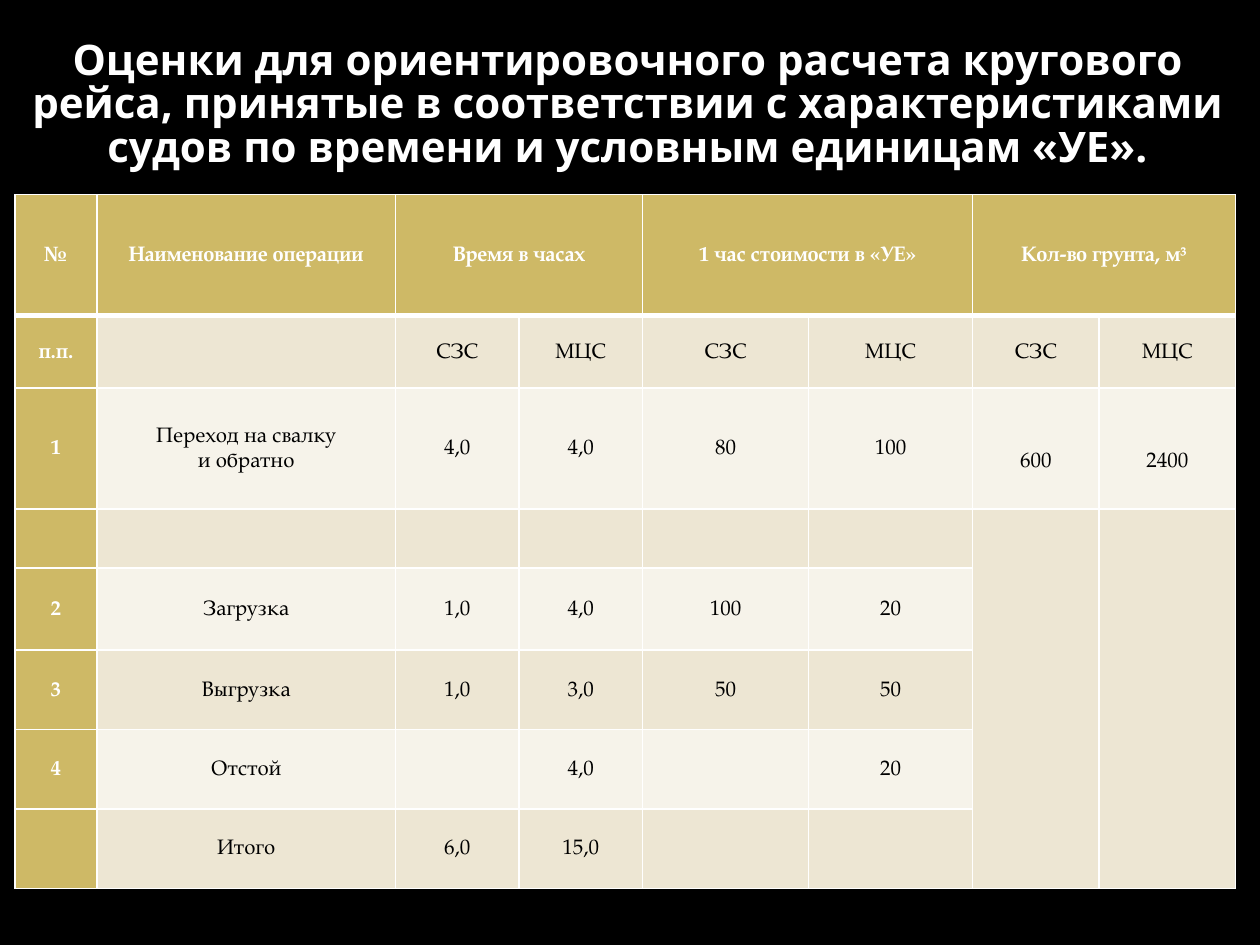
from lxml import etree
from pptx import Presentation
from pptx.dml.color import RGBColor
from pptx.enum.text import MSO_ANCHOR, MSO_AUTO_SIZE, PP_ALIGN
from pptx.oxml.ns import qn
from pptx.util import Pt

CENTER = PP_ALIGN.CENTER
MIDDLE = MSO_ANCHOR.MIDDLE
NO_AUTOFIT = MSO_AUTO_SIZE.NONE
TITLE_ONLY = 5

TITLE = ("Оценки для ориентировочного расчета кругового рейса, принятые "
         "в соответствии с характеристиками судов по времени "
         "и условным единицам «УЕ».")
ROWS = [
    ["№", "Наименование операции", "Время в часах", "",
     "1 час стоимости в «УЕ»", "", "Кол-во грунта, м³", ""],
    ["п.п.", ""] + ["СЗС", "МЦС"] * 3,
    ["1", "Переход на свалку\nи обратно", "4,0", "4,0", "80", "100", "600", "2400"],
    [""] * 8,
    ["2", "Загрузка", "1,0", "4,0", "100", "20", "", ""],
    ["3", "Выгрузка", "1,0", "3,0", "50", "50", "", ""],
    ["4", "Отстой", "", "4,0", "", "20", "", ""],
    ["", "Итого", "6,0", "15,0", "", "", "", ""],
]
# First and last cell of each merged block, as (row, column)
MERGES = [((0, 2), (0, 3)), ((0, 4), (0, 5)), ((0, 6), (0, 7)),
          ((3, 6), (7, 6)), ((3, 7), (7, 7))]
LOWERED = [(2, 6), (2, 7)]

COLUMN_WIDTHS = [46.8, 170.6, 70.6, 70.6, 95, 93.6, 72.4, 78]
ROW_HEIGHTS = [69.1, 41.4, 69.1, 33.8, 46.8, 45.4, 45.4, 45.4]
TABLE_LEFT, TABLE_TOP = 8.6, 111.3
LOWERED_MARGIN = 14

THEME = {
    "background": "000000", "light": "FFFFFF", "dark": "000000",
    "accent": "CEB966", "band": "EDE6D3", "pale": "F6F3EA",
    "title_font": "Noto Sans", "table_font": "TeX Gyre Pagella",
    "title_size": 24, "table_size": 12,
    "thin_line": 1, "thick_line": 3,
}


def write_text(frame, text, *, font, size, color, bold=False, line_spacing=1.0):
    frame.text = text
    for para in frame.paragraphs:
        para.alignment = CENTER
        para.line_spacing = line_spacing
        para.font.name = font
        para.font.size = Pt(size)
        para.font.bold = bold
        para.font.color.rgb = RGBColor.from_string(color)


def set_borders(cell, **widths):
    properties = cell._tc.get_or_add_tcPr()
    for side in ("L", "R", "T", "B"):
        line = etree.SubElement(properties, qn(f"a:ln{side}"),
                                w=str(Pt(widths.get(side, THEME["thin_line"]))))
        fill = etree.SubElement(line, qn("a:solidFill"))
        etree.SubElement(fill, qn("a:srgbClr"), val=THEME["light"])


def add_title(slide):
    title = slide.shapes.title
    title.left, title.top, title.width, title.height = Pt(0), Pt(9.4), Pt(717), Pt(102)
    frame = title.text_frame
    frame.word_wrap = True
    frame.auto_size = NO_AUTOFIT
    frame.vertical_anchor = MIDDLE
    write_text(frame, TITLE, font=THEME["title_font"], size=THEME["title_size"],
               color=THEME["light"], bold=True, line_spacing=0.87)


def format_cell(cell, row, column, text):
    heading = row == 0 or column == 0
    cell.margin_left = cell.margin_right = cell.margin_bottom = Pt(0)
    cell.margin_top = Pt(LOWERED_MARGIN if (row, column) in LOWERED else 0)
    cell.vertical_anchor = MIDDLE
    thick_side = {0: "B", 1: "T"}.get(row)
    set_borders(cell, **({thick_side: THEME["thick_line"]} if thick_side else {}))
    if heading:
        fill = THEME["accent"]
    elif row % 2 or column >= 6 and row > 2:
        fill = THEME["band"]
    else:
        fill = THEME["pale"]
    cell.fill.solid()
    cell.fill.fore_color.rgb = RGBColor.from_string(fill)
    write_text(cell.text_frame, text, font=THEME["table_font"],
               size=THEME["table_size"], bold=heading, line_spacing=1.15,
               color=THEME["light"] if heading else THEME["dark"])


def add_estimates_table(slide):
    table = slide.shapes.add_table(
        len(ROWS), len(COLUMN_WIDTHS), Pt(TABLE_LEFT), Pt(TABLE_TOP),
        Pt(sum(COLUMN_WIDTHS)), Pt(sum(ROW_HEIGHTS))).table
    for column, width in zip(table.columns, COLUMN_WIDTHS):
        column.width = Pt(width)
    for row, height in zip(table.rows, ROW_HEIGHTS):
        row.height = Pt(height)
    for row, texts in enumerate(ROWS):
        for column, text in enumerate(texts):
            format_cell(table.cell(row, column), row, column, text)
    for first, last in MERGES:
        table.cell(*first).merge(table.cell(*last))


def main():
    deck = Presentation()
    deck.slide_width, deck.slide_height = Pt(720), Pt(540)
    slide = deck.slides.add_slide(deck.slide_layouts[TITLE_ONLY])
    slide.background.fill.solid()
    slide.background.fill.fore_color.rgb = RGBColor.from_string(THEME["background"])
    add_title(slide)
    add_estimates_table(slide)
    deck.save("out.pptx")


if __name__ == "__main__":
    main()
